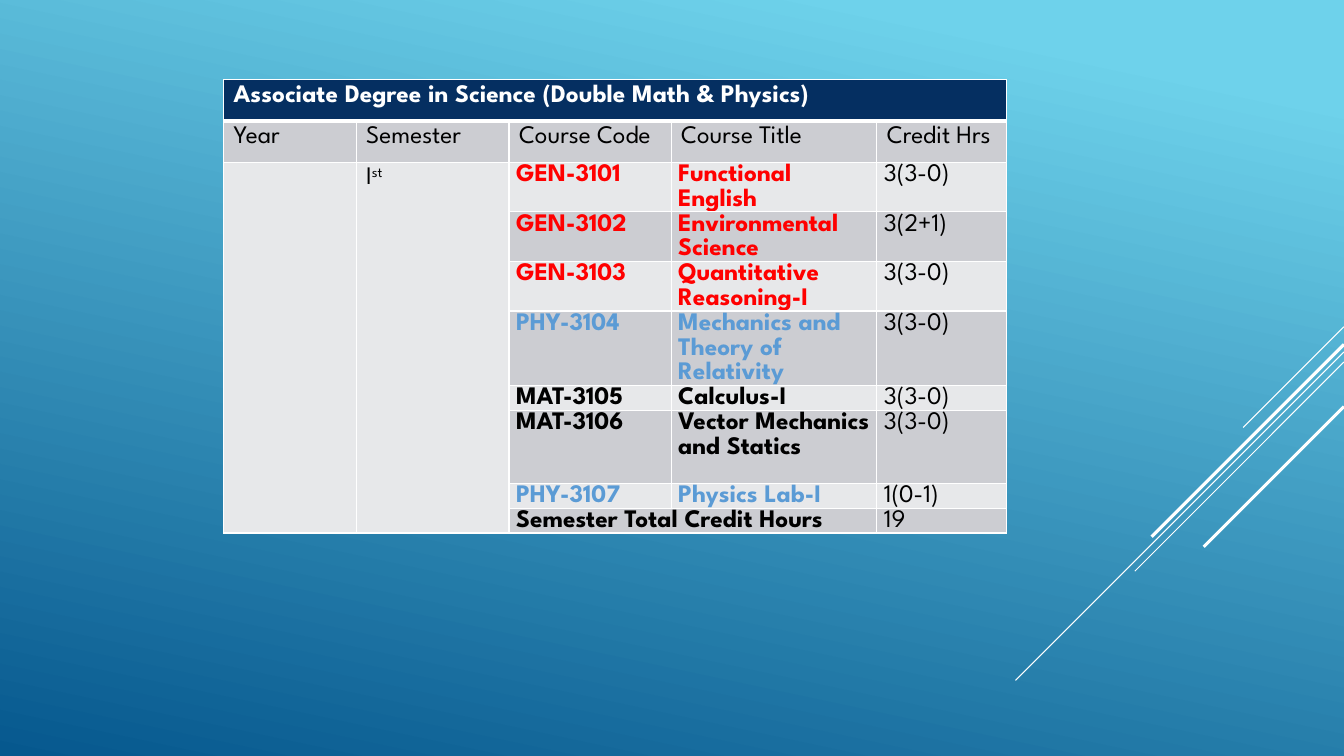
from lxml.etree import SubElement
from pptx import Presentation
from pptx.dml.color import RGBColor
from pptx.enum.shapes import MSO_CONNECTOR as Connector
from pptx.oxml.ns import qn
from pptx.util import Inches, Pt

COLORS = {
    "sky": "6ED2EB", "deep": "06588E", "navy": "052F61", "white": "FFFFFF",
    "black": "000000", "red": "FF0000", "blue": "5B9BD5",
    "dark band": "CCCDD2", "light band": "E7E8EA",
}
GRID_COLUMNS, GRID_ROWS = 1600, 900
HEADER_ROWS, LINE_ROWS = 49, 29
TABLE_COLUMNS = [158, 182, 193, 245, 154]
HEADINGS = ["Year", "Semester", "Course Code", "Course Title", "Credit Hrs"]
COURSES = [
    ("GEN-3101", "Functional English", "3(3-0)", "red", 2),
    ("GEN-3102", "Environmental Science", "3(2+1)", "red", 2),
    ("GEN-3103", "Quantitative Reasoning-I", "3(3-0)", "red", 2),
    ("PHY-3104", "Mechanics and Theory of Relativity", "3(3-0)", "blue", 3),
    ("MAT-3105", "Calculus-I", "3(3-0)", "black", 1),
    ("MAT-3106", "Vector Mechanics and Statics", "3(3-0)", "black", 3),
    ("PHY-3107", "Physics Lab-I", "1(0-1)", "blue", 1),
    ("Semester Total Credit Hours", "", "19", "black", 1),
]
DIAGONALS = [(389, 120, 0.75), (419, 391, 0.75), (431, 249, 0.75),
             (410, 229, 2.25), (484, 167, 2.25)]


class SlideBuilder:
    font = "League Spartan"
    size = Pt(18)

    def __init__(self, deck):
        self.page = deck.slides.add_slide(deck.slide_layouts[6])
        self.column = deck.slide_width / GRID_COLUMNS
        self.row = deck.slide_height / GRID_ROWS

    def across(self, columns):
        return round(columns * self.column)

    def down(self, rows):
        return round(rows * self.row)

    def color(self, name):
        return RGBColor.from_string(COLORS[name])

    def background(self, first, last, angle):
        fill = self.page.background.fill
        fill.gradient()
        fill.gradient_angle = angle
        for stop, name, position in zip(fill.gradient_stops, (first, last), (0.1, 1)):
            stop.color.rgb = self.color(name)
            stop.position = position

    def diagonal(self, top, run, width):
        line = self.page.shapes.add_connector(
            Connector.STRAIGHT, self.across(GRID_COLUMNS), self.down(top),
            self.across(GRID_COLUMNS - run), self.down(top + run))
        line.line.color.rgb = self.color("white")
        line.line.width = Pt(width)
        SubElement(line._element.spPr, qn("a:effectLst"))

    def table(self, left, top, columns, rows):
        frame = self.page.shapes.add_table(
            len(rows), len(columns), self.across(left), self.down(top),
            self.across(sum(columns)), self.down(sum(rows)))
        table = frame.table
        table.first_row = table.horz_banding = False
        for column, width in zip(table.columns, columns):
            column.width = self.across(width)
        for row, height in zip(table.rows, rows):
            row.height = self.down(height)
        return table

    def cell(self, cell, fill, top=1, bottom=1):
        properties = cell._tc.get_or_add_tcPr()
        for side, width in zip("LRTB", (1, 1, top, bottom)):
            border = SubElement(properties, qn(f"a:ln{side}"), w=str(Pt(width)))
            solid = SubElement(border, qn("a:solidFill"))
            SubElement(solid, qn("a:srgbClr"), val=COLORS["white"])
        cell.fill.solid()
        cell.fill.fore_color.rgb = self.color(fill)

    def text(self, cell, words, color="black", bold=False, tight=False):
        para = cell.text_frame.paragraphs[0]
        para.text = words
        para.font.name = self.font
        para.font.size = self.size
        para.font.bold = bold
        para.font.color.rgb = self.color(color)
        if tight:
            cell.margin_left = cell.margin_right = Inches(0.07)
            cell.margin_top = cell.margin_bottom = 0
            para.line_spacing = 1.07
        return para


def add_courses(builder):
    heights = [HEADER_ROWS] * 2 + [course[-1] * LINE_ROWS for course in COURSES]
    table = builder.table(266, 95, TABLE_COLUMNS, heights)
    last_row, last_column = len(heights) - 1, len(TABLE_COLUMNS) - 1

    for row in range(len(heights)):
        for column in range(len(TABLE_COLUMNS)):
            if row == 0:
                fill = "navy"
            elif row % 2 or (row > 1 and column < 2):
                fill = "dark band" if row == 1 else "light band"
            else:
                fill = "light band"
            if row > 1 and column > 1:
                fill = "dark band" if row % 2 else "light band"
            builder.cell(table.cell(row, column), fill,
                         3 if row == 1 else 1, 3 if row == 0 else 1)

    table.cell(0, 0).merge(table.cell(0, last_column))
    for column in range(2):
        table.cell(2, column).merge(table.cell(last_row, column))
    table.cell(last_row, 2).merge(table.cell(last_row, 3))

    builder.text(table.cell(0, 0), "Associate Degree in Science (Double Math & Physics)",
                 "white", True)
    for column, heading in enumerate(HEADINGS):
        builder.text(table.cell(1, column), heading)
    semester = builder.text(table.cell(2, 1), "I")
    ordinal = semester.add_run()
    ordinal.text = "st"
    ordinal.font._element.set("baseline", "30000")

    for row, (code, title, hours, color, _) in enumerate(COURSES, 2):
        builder.text(table.cell(row, 2), code, color, True, True)
        if title:
            builder.text(table.cell(row, 3), title, color, True, True)
        builder.text(table.cell(row, 4), hours, tight=True)


def main():
    deck = Presentation()
    deck.slide_width, deck.slide_height = Inches(13.333), Inches(7.5)
    builder = SlideBuilder(deck)
    builder.background("sky", "deep", 258)
    for top, run, width in DIAGONALS:
        builder.diagonal(top, run, width)
    add_courses(builder)
    deck.save("out.pptx")


if __name__ == "__main__":
    main()
